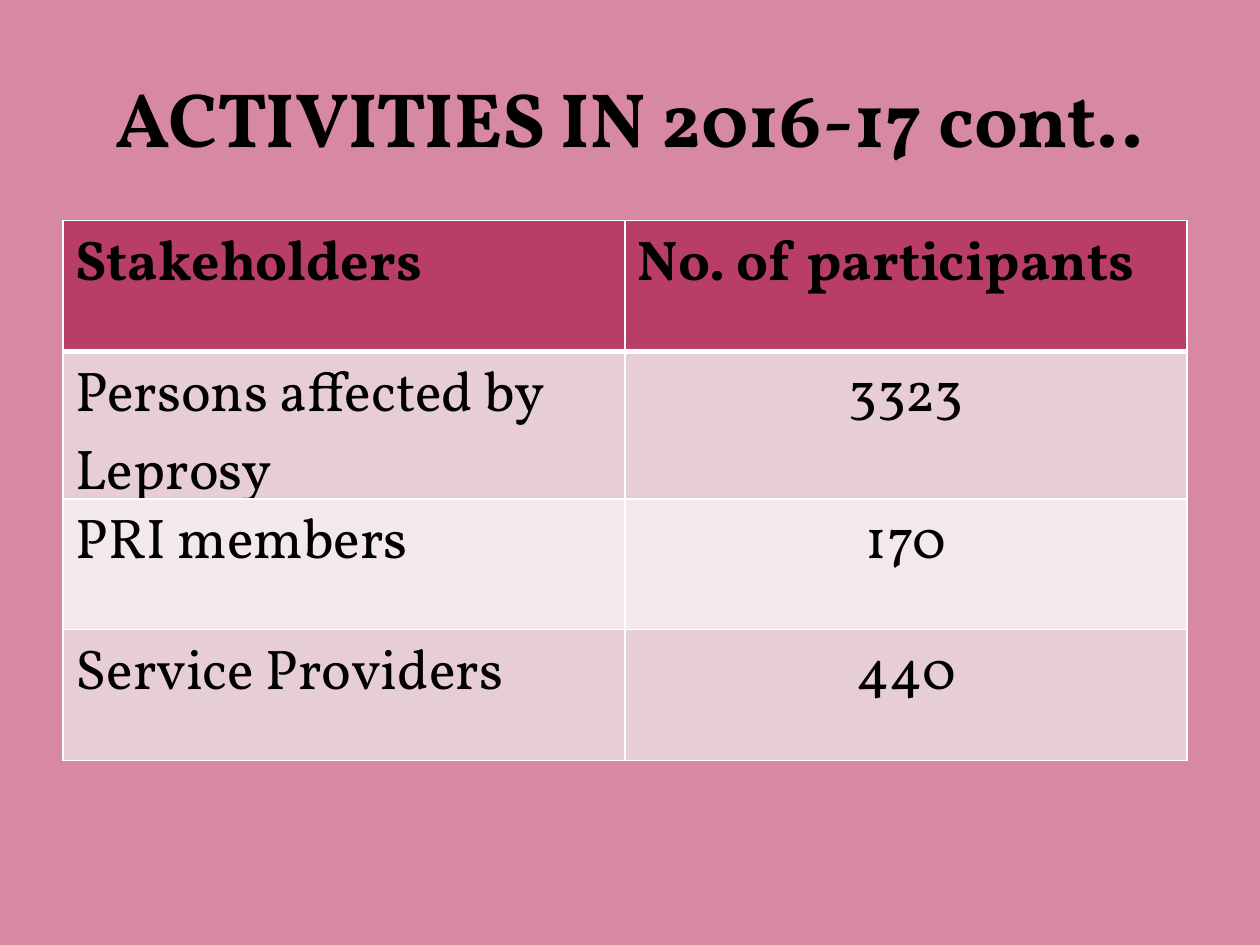
from dataclasses import dataclass

from lxml import etree
from pptx import Presentation
from pptx.dml.color import RGBColor
from pptx.enum import text
from pptx.oxml import ns
from pptx.util import Cm, Pt


@dataclass(frozen=True)
class Theme:
    font: str = "Vollkorn"
    background: str = "D788A3"
    ink: str = "000000"
    header: str = "B83D68"
    bands: tuple = ("E6CED4", "F3E8EB")
    border: str = "FFFFFF"
    title_size: int = 44
    table_size: int = 32


theme = Theme()


def write(frame, wording, size, bold, align):
    paragraph = frame.paragraphs[0]
    paragraph.alignment = align
    run = paragraph.add_run()
    run.text = wording
    run.font.name = theme.font
    run.font.size = Pt(size)
    run.font.bold = bold
    run.font.color.rgb = RGBColor.from_string(theme.ink)


def set_borders(cell, top, bottom):
    """Draw all four edges; top and bottom are widths in points."""
    properties = cell._tc.get_or_add_tcPr()
    edges = {"lnL": 1, "lnR": 1, "lnT": top, "lnB": bottom}
    for place, (edge, width) in enumerate(edges.items()):
        line = etree.Element(ns.qn(f"a:{edge}"), w=str(Pt(width)))
        fill = etree.SubElement(line, ns.qn("a:solidFill"))
        etree.SubElement(fill, ns.qn("a:srgbClr"), val=theme.border)
        properties.insert(place, line)


presentation = Presentation()
presentation.slide_width = Cm(25.4)
presentation.slide_height = Cm(19.05)
slide = presentation.slides.add_slide(presentation.slide_layouts[6])
slide.background.fill.solid()
slide.background.fill.fore_color.rgb = RGBColor.from_string(theme.background)

heading = slide.shapes.add_textbox(Cm(1.27), Cm(0.76), Cm(22.86), Cm(3.18)).text_frame
heading.word_wrap = True
heading.vertical_anchor = text.MSO_ANCHOR.MIDDLE
write(heading, "ACTIVITIES IN 2016-17 cont..", theme.title_size, True, text.PP_ALIGN.CENTER)

participants = [
    ("Stakeholders", "No. of participants"),
    ("Persons affected by Leprosy", "3323"),
    ("PRI members", "170"),
    ("Service Providers", "440"),
]
row_height = Cm(2.64)
table = slide.shapes.add_table(
    len(participants), 2, Cm(1.27), Cm(4.45), Cm(22.66), row_height * len(participants)
).table

for row, entries in enumerate(participants):
    table.rows[row].height = row_height
    is_header = row == 0
    color = theme.header if is_header else theme.bands[(row - 1) % 2]
    for column, wording in enumerate(entries):
        cell = table.cell(row, column)
        cell.fill.solid()
        cell.fill.fore_color.rgb = RGBColor.from_string(color)
        set_borders(cell, top=3 if row == 1 else 1, bottom=3 if is_header else 1)
        is_count = column == 1 and not is_header
        align = text.PP_ALIGN.CENTER if is_count else text.PP_ALIGN.LEFT
        write(cell.text_frame, wording, theme.table_size, is_header, align)

presentation.save("out.pptx")
